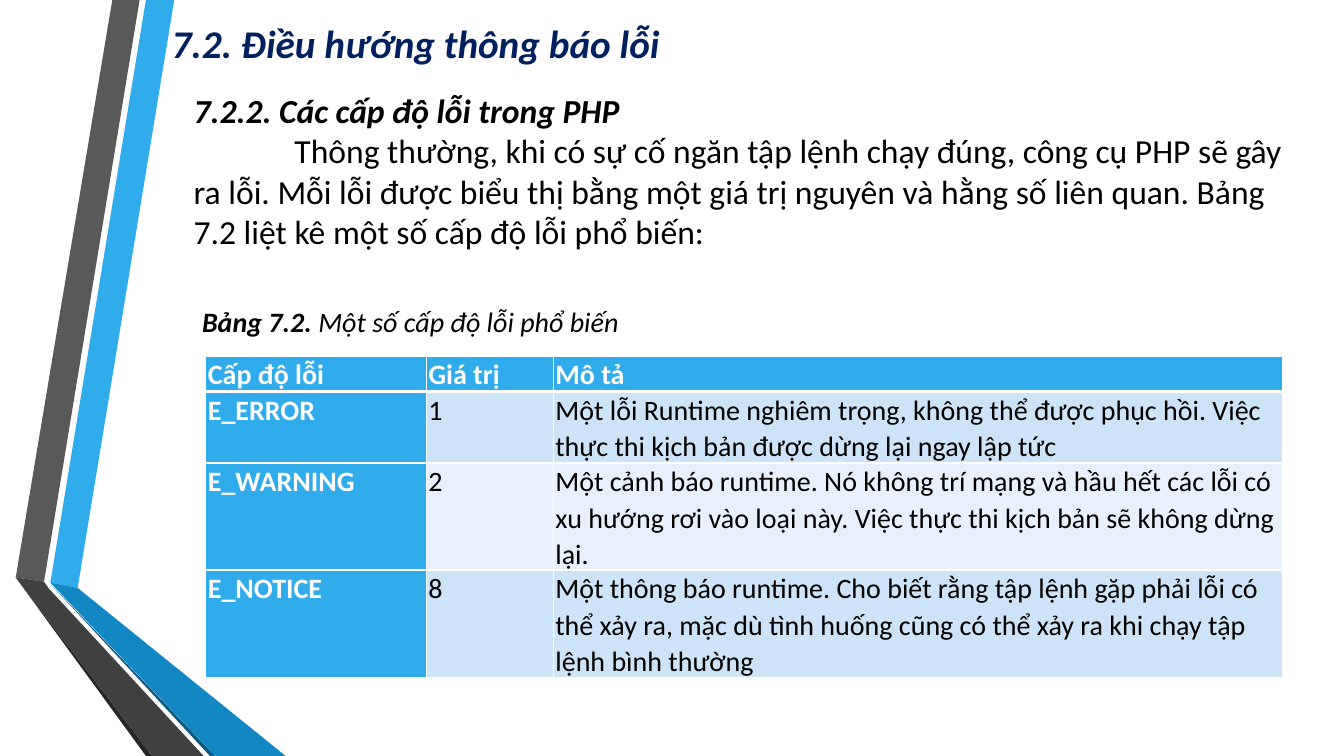
"""Build the slide on PHP error levels."""
from dataclasses import dataclass, field
from typing import Any

from lxml import etree
from pptx import Presentation
from pptx import util as u
from pptx.dml import color
from pptx.enum import text
from pptx.oxml import ns

PX = 9525
FONT = "Calibri"
WHITE, BLACK, BLUE = "FFFFFF", "000000", "30ACEC"
BANDS = ("CDE3F8", "E8F1FB")


@dataclass(frozen=True)
class Ribbon:
    fill: str
    points: tuple[tuple[int, int], ...]


@dataclass(frozen=True)
class Run:
    words: str
    bold: bool = False
    italic: bool = False


@dataclass(frozen=True)
class Line:
    runs: tuple[Run, ...]
    indent: int = 0
    spacing: float = 1.0


@dataclass(frozen=True)
class Block:
    box: tuple[int, int, int, int]
    size: int
    lines: tuple[Line, ...]
    ink: str = BLACK
    frame: dict[str, Any] = field(default_factory=dict)


RIBBONS = (
    Ribbon(BLUE, ((48, 555), (74, 560), (166, 0), (139, 0))),
    Ribbon("595959", ((133, 0), (107, 0), (15, 550), (42, 554))),
    Ribbon("262626", ((15, 550), (139, 720), (145, 720))),
    Ribbon("0C5A82", ((48, 556), (200, 720), (205, 720))),
    Ribbon("1287C3", ((48, 555), (205, 720), (272, 720), (74, 560))),
    Ribbon("404040", ((194, 720), (46, 560), (42, 554), (15, 550), (145, 720))),
)
GROW = {"auto_size": text.MSO_AUTO_SIZE.SHAPE_TO_FIT_TEXT}
BLOCKS = (
    Block((154, -22, 1113, 103), 28,
          (Line((Run("7.2. Điều hướng thông báo lỗi", True, True),), spacing=1.5),),
          "002060", {"vertical_anchor": text.MSO_ANCHOR.MIDDLE}),
    Block((175, 81, 1080, 165), 24, (
        Line((Run("7.2.2. Các cấp độ lỗi trong PHP", True, True),)),
        Line((Run("Thông thường, khi có sự cố ngăn tập lệnh chạy đúng, công cụ PHP sẽ gây "
                  "ra lỗi. Mỗi lỗi được biểu thị bằng một giá trị nguyên và hằng số liên quan. "
                  "Bảng 7.2 liệt kê một số cấp độ lỗi phổ biến:"),), indent=96),
    ), frame=GROW),
    Block((183, 285, 458, 42), 20,
          (Line((Run("Bảng 7.2. ", True, True),
                 Run("Một số cấp độ lỗi phổ biến", italic=True))),), frame=GROW),
)
COLUMNS = (210, 121, 695)
ROW_HEIGHTS = (33, 68, 102, 102)
LEVELS = (
    ("Cấp độ lỗi", "Giá trị", "Mô tả"),
    ("E_ERROR", "1", "Một lỗi Runtime nghiêm trọng, không thể được phục hồi. "
     "Việc thực thi kịch bản được dừng lại ngay lập tức"),
    ("E_WARNING", "2", "Một cảnh báo runtime. Nó không trí mạng và hầu hết các lỗi có "
     "xu hướng rơi vào loại này. Việc thực thi kịch bản sẽ không dừng lại."),
    ("E_NOTICE", "8", "Một thông báo runtime. Cho biết rằng tập lệnh gặp phải lỗi có thể "
     "xảy ra, mặc dù tình huống cũng có thể xảy ra khi chạy tập lệnh bình thường"),
)


def px(length: int) -> u.Emu:
    return u.Emu(length * PX)


def rgb(value: str) -> color.RGBColor:
    return color.RGBColor.from_string(value)


def apply(target: Any, values: dict[str, Any]) -> None:
    for name, value in values.items():
        setattr(target, name, value)


def paint(target: Any, value: str) -> None:
    target.fill.solid()
    target.fill.fore_color.rgb = rgb(value)


def write(paragraph: Any, line: Line, size: int, ink: str) -> None:
    paragraph.line_spacing = line.spacing
    if line.indent:
        paragraph._p.get_or_add_pPr().set("indent", str(px(line.indent)))
    for item in line.runs:
        run = paragraph.add_run()
        run.text = item.words
        apply(run.font, {"name": FONT, "size": u.Pt(size),
                         "bold": item.bold, "italic": item.italic})
        run.font.color.rgb = rgb(ink)


def draw_ribbon(slide: Any, ribbon: Ribbon) -> None:
    start, *rest = ribbon.points
    builder = slide.shapes.build_freeform(*start, scale=PX)
    builder.add_line_segments(rest, close=True)
    shape = builder.convert_to_shape()
    paint(shape, ribbon.fill)
    shape.line.fill.background()
    shape.shadow.inherit = False


def draw_block(slide: Any, block: Block) -> None:
    frame = slide.shapes.add_textbox(*map(px, block.box)).text_frame
    apply(frame, {"word_wrap": True, **block.frame})
    for index, line in enumerate(block.lines):
        paragraph = frame.add_paragraph() if index else frame.paragraphs[0]
        write(paragraph, line, block.size, block.ink)


def draw_borders(cell: Any, bottom: int) -> None:
    properties = cell._tc.get_or_add_tcPr()
    for index, (side, width) in enumerate({"L": 1, "R": 1, "T": 1, "B": bottom}.items()):
        border = etree.Element(ns.qn(f"a:ln{side}"), w=str(u.Pt(width)))
        fill = etree.SubElement(border, ns.qn("a:solidFill"))
        etree.SubElement(fill, ns.qn("a:srgbClr"), val=WHITE)
        properties.insert(index, border)


def draw_table(slide: Any) -> None:
    box = map(px, (196, 339, sum(COLUMNS), sum(ROW_HEIGHTS)))
    table = slide.shapes.add_table(len(LEVELS), len(COLUMNS), *box).table
    for column, width in zip(table.columns, COLUMNS):
        column.width = px(width)
    for row_index, (row, height) in enumerate(zip(table.rows, ROW_HEIGHTS)):
        row.height = px(height)
        for column_index, cell in enumerate(row.cells):
            heading = row_index == 0 or column_index == 0
            apply(cell, {"margin_left": px(2), "margin_right": px(2),
                         "margin_top": 0, "margin_bottom": 0})
            paint(cell, BLUE if heading else BANDS[(row_index - 1) % 2])
            draw_borders(cell, 1 if row_index else 3)
            words = Run(LEVELS[row_index][column_index], heading)
            write(cell.text_frame.paragraphs[0], Line((words,), spacing=1.06),
                  20, WHITE if heading else BLACK)


def main() -> None:
    presentation = Presentation()
    apply(presentation, {"slide_width": px(1280), "slide_height": px(720)})
    slide = presentation.slides.add_slide(presentation.slide_layouts[6])
    for ribbon in RIBBONS:
        draw_ribbon(slide, ribbon)
    for block in BLOCKS:
        draw_block(slide, block)
    draw_table(slide)
    presentation.save("out.pptx")


if __name__ == "__main__":
    main()
